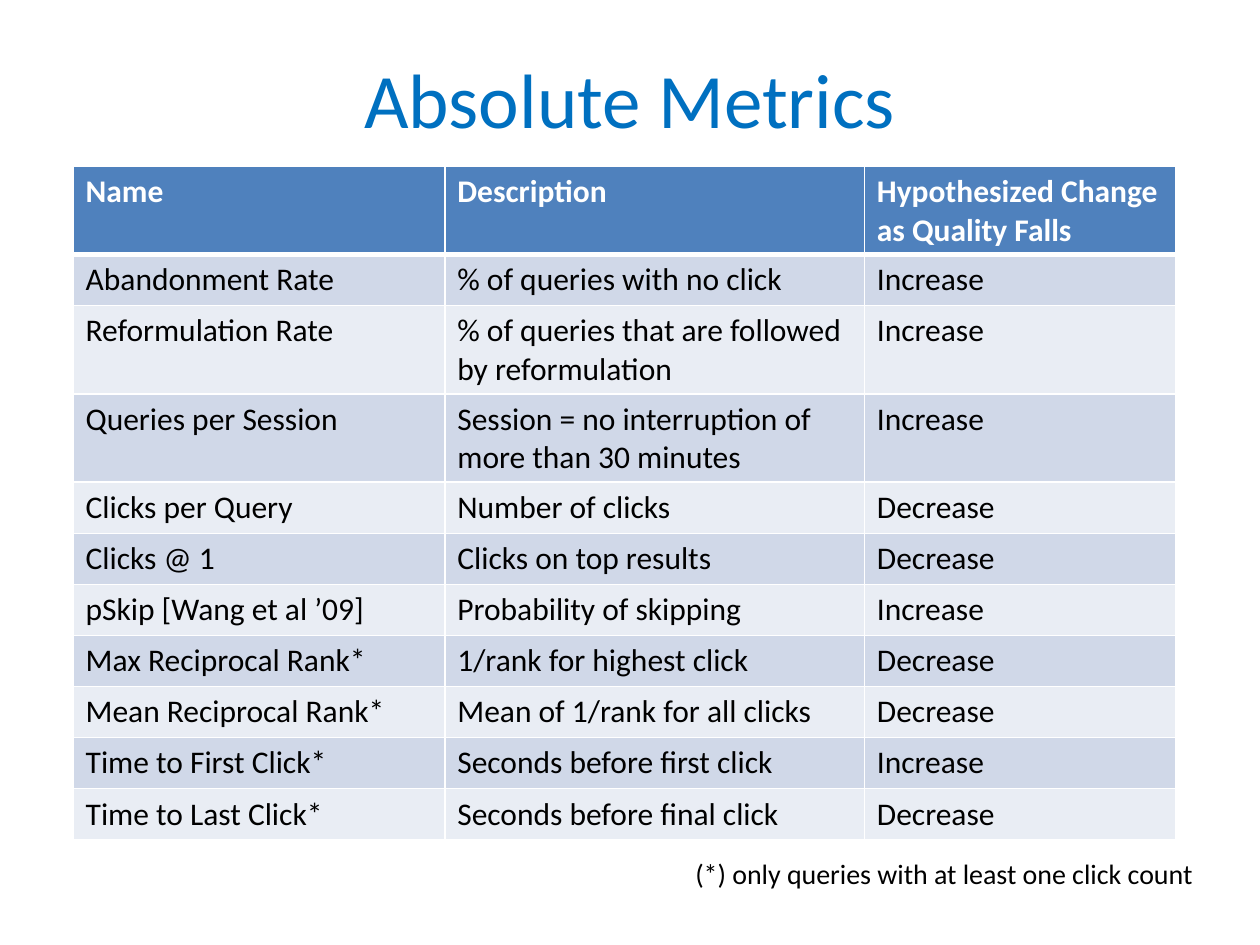
from dataclasses import dataclass
from typing import Any

from lxml import etree
from pptx import Presentation
from pptx import util as u
from pptx.dml.color import RGBColor
from pptx.enum import text
from pptx.oxml import ns

SLIDE_WIDTH, SLIDE_HEIGHT = u.Inches(10), u.Inches(7.5)
FONT = "Calibri"
WHITE, BLACK, TITLE_BLUE, HEADER_BLUE = "FFFFFF", "000000", "0070C0", "4F81BD"
BANDS = ("D0D8E8", "E9EDF4")
COLUMN_WIDTHS = (2.95, 3.33, 2.47)
HEADER = ("Name", "Description", "Hypothesized Change as Quality Falls")


@dataclass(frozen=True)
class Metric:
    """One absolute metric and how it should react to falling quality."""

    name: str
    description: str
    change: str


@dataclass(frozen=True)
class Box:
    """A rectangle given as shares of the slide's size."""

    left: float
    top: float
    width: float
    height: float

    def place(self) -> tuple[int, int, int, int]:
        """Return the rectangle in slide units."""
        return (int(self.left * SLIDE_WIDTH), int(self.top * SLIDE_HEIGHT),
                int(self.width * SLIDE_WIDTH), int(self.height * SLIDE_HEIGHT))


@dataclass(frozen=True)
class Label:
    """A line of text standing on its own."""

    words: str
    box: Box
    size: int
    color: str
    align: Any
    anchor: Any
    wrap: bool


METRICS = (
    Metric("Abandonment Rate", "% of queries with no click", "Increase"),
    Metric("Reformulation Rate", "% of queries that are followed by reformulation", "Increase"),
    Metric("Queries per Session", "Session = no interruption of more than 30 minutes", "Increase"),
    Metric("Clicks per Query", "Number of clicks", "Decrease"),
    Metric("Clicks @ 1", "Clicks on top results", "Decrease"),
    Metric("pSkip [Wang et al ’09]", "Probability of skipping", "Increase"),
    Metric("Max Reciprocal Rank*", "1/rank for highest click", "Decrease"),
    Metric("Mean Reciprocal Rank*", "Mean of 1/rank for all clicks", "Decrease"),
    Metric("Time to First Click*", "Seconds before first click", "Increase"),
    Metric("Time to Last Click*", "Seconds before final click", "Decrease"),
)
TABLE_BOX = Box(0.058, 0.176, 0.875, 0.595)
LABELS = (
    Label("Absolute Metrics", Box(0.05, 0.04, 0.9, 0.127), 44, TITLE_BLUE,
          text.PP_ALIGN.CENTER, text.MSO_ANCHOR.MIDDLE, True),
    Label("(*) only queries with at least one click count", Box(0.542, 0.9, 0.42, 0.05), 16,
          BLACK, text.PP_ALIGN.LEFT, text.MSO_ANCHOR.TOP, False),
)


def rgb(value: str) -> RGBColor:
    """Turn a hex string into a colour."""
    return RGBColor.from_string(value)


def format_runs(frame: Any, size: int, color: str, bold: bool = False) -> None:
    """Give every run in a text frame the same look."""
    for paragraph in frame.paragraphs:
        for run in paragraph.runs:
            run.font.name = FONT
            run.font.size = u.Pt(size)
            run.font.bold = bold
            run.font.color.rgb = rgb(color)


def draw_label(slide: Any, label: Label) -> None:
    """Add a text box for a label."""
    frame = slide.shapes.add_textbox(*label.box.place()).text_frame
    frame.text = label.words
    frame.word_wrap = label.wrap
    frame.vertical_anchor = label.anchor
    frame.paragraphs[0].alignment = label.align
    format_runs(frame, label.size, label.color)


def draw_borders(cell: Any, widths: dict[str, int]) -> None:
    """Put white lines of the given point widths around a cell."""
    properties = cell._tc.get_or_add_tcPr()
    for position, (side, width) in enumerate(widths.items()):
        line = etree.Element(ns.qn(f"a:{side}"), w=str(u.Pt(width)))
        fill = etree.SubElement(line, ns.qn("a:solidFill"))
        etree.SubElement(fill, ns.qn("a:srgbClr"), val=WHITE)
        properties.insert(position, line)


def draw_table(slide: Any, metrics: tuple[Metric, ...]) -> None:
    """Add the banded table of metrics under its header row."""
    rows = [HEADER] + [(metric.name, metric.description, metric.change) for metric in metrics]
    table = slide.shapes.add_table(len(rows), len(HEADER), *TABLE_BOX.place()).table
    for column, width in zip(table.columns, COLUMN_WIDTHS):
        column.width = u.Inches(width)
    for row, words in enumerate(rows):
        is_header = row == 0
        fill = HEADER_BLUE if is_header else BANDS[(row - 1) % len(BANDS)]
        widths = {"lnL": 1, "lnR": 1, "lnT": 3 if row == 1 else 1, "lnB": 3 if is_header else 1}
        for column, content in enumerate(words):
            cell = table.cell(row, column)
            cell.text_frame.text = content
            format_runs(cell.text_frame, 18, WHITE if is_header else BLACK, is_header)
            cell.fill.solid()
            cell.fill.fore_color.rgb = rgb(fill)
            draw_borders(cell, widths)


def main() -> None:
    """Build the slide and save it."""
    presentation = Presentation()
    presentation.slide_width, presentation.slide_height = SLIDE_WIDTH, SLIDE_HEIGHT
    slide = presentation.slides.add_slide(presentation.slide_layouts[6])
    title, footnote = LABELS
    draw_label(slide, title)
    draw_table(slide, METRICS)
    draw_label(slide, footnote)
    presentation.save("out.pptx")


if __name__ == "__main__":
    main()
